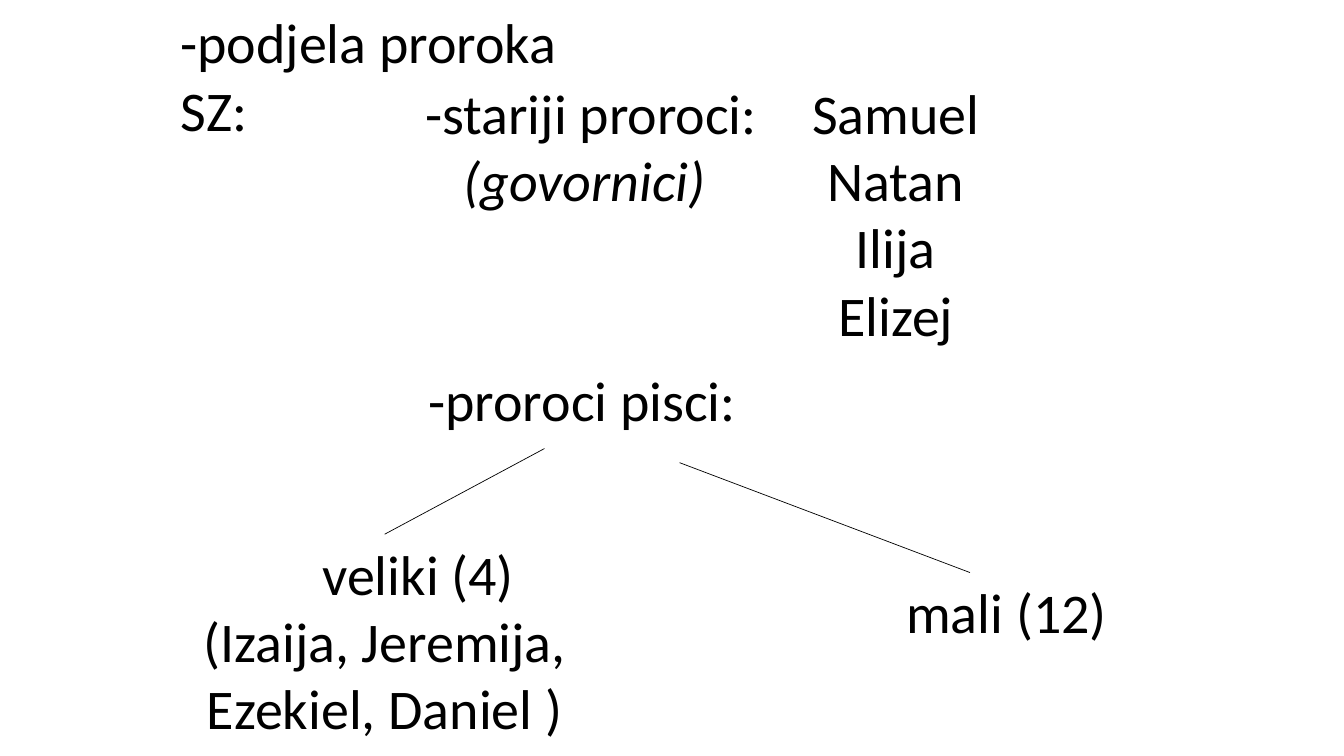
"""Builds the slide on the division of the Old Testament prophets."""
from lxml import etree
from pptx import Presentation
from pptx import util as u
from pptx.dml.color import RGBColor
from pptx.enum import shapes, text
from pptx.oxml.ns import qn

LEFT, CENTER = text.PP_ALIGN.LEFT, text.PP_ALIGN.CENTER
THEME = {"font": "Calibri", "size": 40, "ink": RGBColor(0, 0, 0), "line": 0.5}

# (text, alignment, indent in inches, italic)
BLOCKS = {
    "podjela": ((1.69, 0.03, 4.7, 0.77), [("-podjela proroka SZ:", LEFT, 0, False)]),
    "stariji": ((4.12, 0.73, 3.73, 1.45), [("-stariji proroci:", LEFT, 0, False),
                                           ("(govornici)", LEFT, 0.38, True)]),
    "pisci": ((4.15, 3.58, 3.37, 0.77), [("-proroci pisci:", LEFT, 0, False)]),
    "veliki": ((1.1, 5.3, 5.43, 2.12), [("veliki (4)", LEFT, 2, False),
                                        ("(Izaija, Jeremija, Ezekiel, Daniel )", CENTER, 0, False)]),
    "mali": ((8.89, 5.68, 2.32, 0.77), [("mali (12)", LEFT, 0, False)]),
    "govornici": ((7.13, 0.73, 3.51, 2.79), [(name, CENTER, 0, False)
                                             for name in ("Samuel", "Natan", "Ilija", "Elizej")]),
}
BRANCHES = [((5.4, 4.45), (3.82, 5.3), "veliki"), ((6.74, 4.59), (9.62, 5.68), None)]


def add_block(slide, place, lines):
    block = slide.shapes.add_textbox(*map(u.Inches, place))
    frame = block.text_frame
    frame.word_wrap = True
    frame.auto_size = text.MSO_AUTO_SIZE.SHAPE_TO_FIT_TEXT
    for i, (wording, align, indent, italic) in enumerate(lines):
        line = frame.add_paragraph() if i else frame.paragraphs[0]
        line.text, line.alignment = wording, align
        if indent:
            line._p.get_or_add_pPr().set("marL", str(u.Inches(indent)))
        line.font.name, line.font.size = THEME["font"], u.Pt(THEME["size"])
        line.font.color.rgb = THEME["ink"]
        if italic:
            line.font.italic = True
    return block


def add_branch(slide, start, end, target):
    branch = slide.shapes.add_connector(shapes.MSO_CONNECTOR.STRAIGHT, *map(u.Inches, start + end))
    branch.line.color.rgb, branch.line.width = THEME["ink"], u.Pt(THEME["line"])
    etree.SubElement(branch._element.spPr, qn("a:effectLst"))
    if target:
        branch.end_connect(target, 0)


def main():
    deck = Presentation()
    deck.slide_width, deck.slide_height = u.Inches(13.33), u.Inches(7.5)
    slide = deck.slides.add_slide(deck.slide_layouts[6])
    blocks = {key: add_block(slide, *block) for key, block in BLOCKS.items()}
    for start, end, target in BRANCHES:
        add_branch(slide, start, end, blocks.get(target))
    deck.save("out.pptx")


if __name__ == "__main__":
    main()
